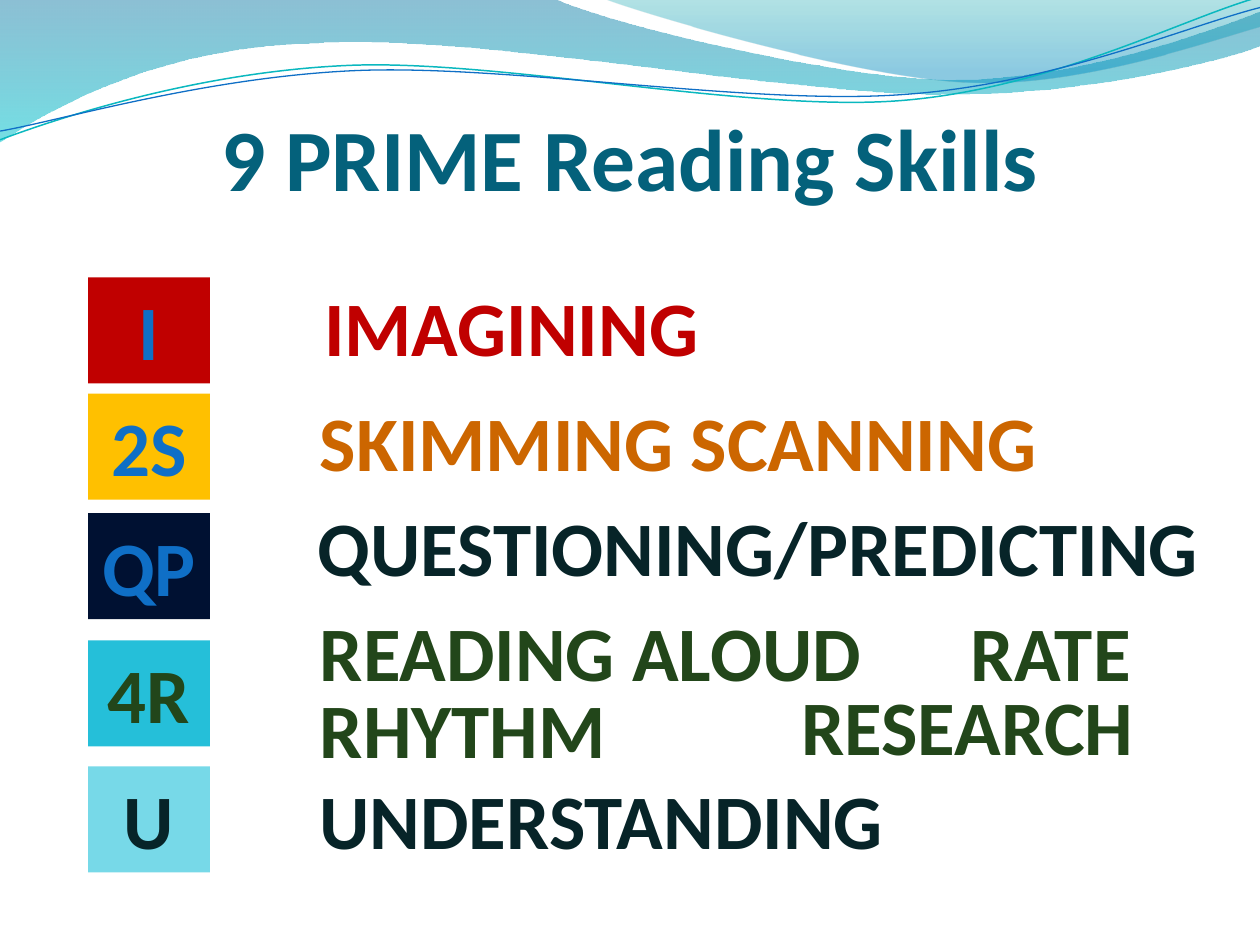
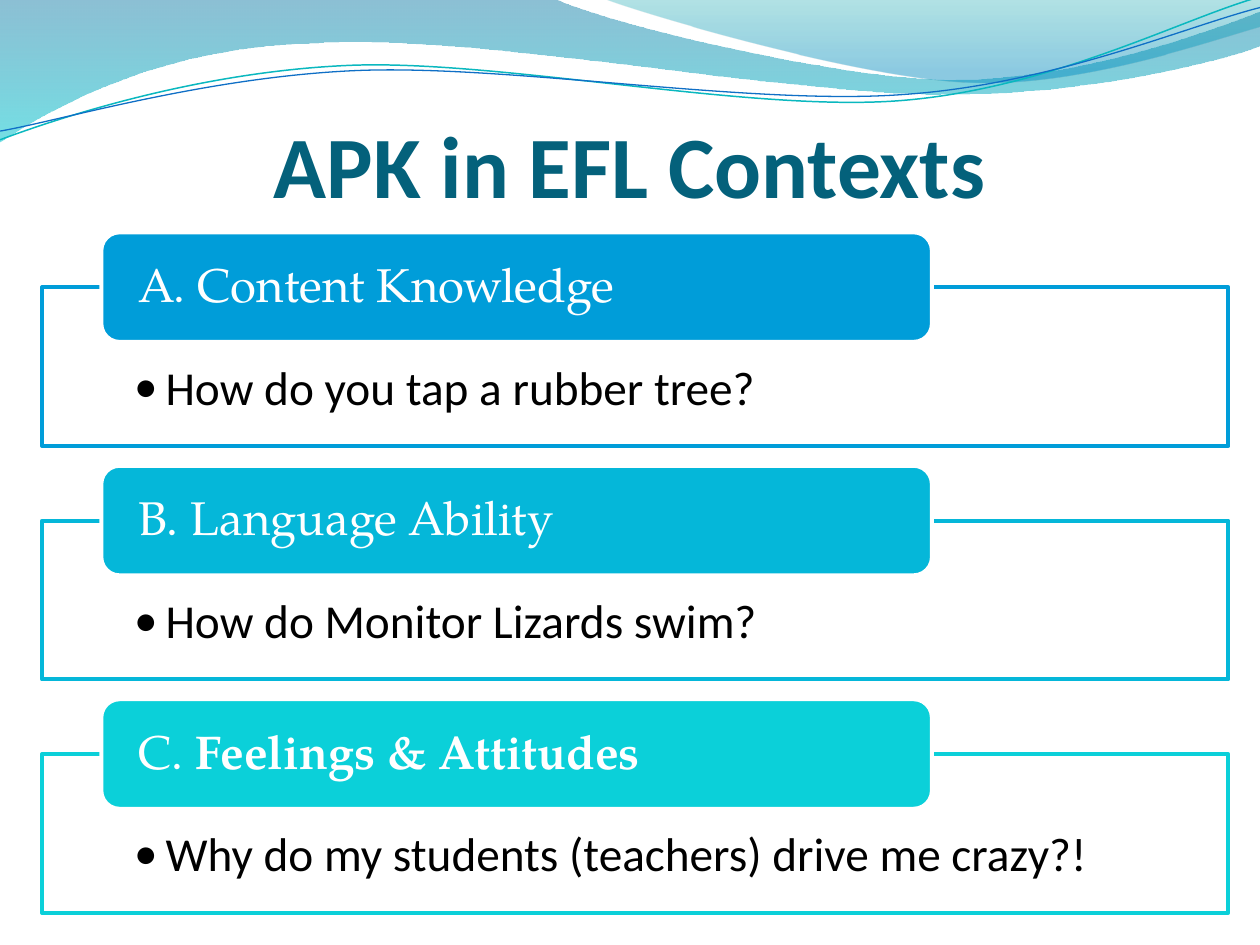
from lxml.etree import SubElement
from pptx import Presentation
from pptx.dml.color import RGBColor
from pptx.enum.shapes import MSO_SHAPE as Preset
from pptx.enum.text import MSO_ANCHOR as Anchor, PP_ALIGN as Align
from pptx.oxml.ns import qn
from pptx.util import Pt

# Colours
WHITE = RGBColor(0xFF, 0xFF, 0xFF)
BLACK = RGBColor(0x00, 0x00, 0x00)
TITLE_TEAL = RGBColor(0x04, 0x61, 0x7B)
BLUE = RGBColor(0x0F, 0x6F, 0xC6)
WAVE_BLUE = RGBColor(0x00, 0x74, 0xA1)
WAVE_AQUA = RGBColor(0x00, 0xC6, 0xCF)
CREST_TEAL = RGBColor(0x00, 0xA1, 0xA9)
CREST_BLUE = RGBColor(0x00, 0x8B, 0xBF)
LINE_TEAL = RGBColor(0x0A, 0xB8, 0xBF)
RED = RGBColor(0xC0, 0x00, 0x00)
YELLOW = RGBColor(0xFF, 0xC0, 0x00)
ORANGE = RGBColor(0xCC, 0x66, 0x00)
NAVY = RGBColor(0x00, 0x11, 0x32)
CYAN = RGBColor(0x25, 0xBF, 0xD9)
PALE_CYAN = RGBColor(0x77, 0xD9, 0xE8)
GREEN = RGBColor(0x22, 0x46, 0x1A)
INK = RGBColor(0x07, 0x24, 0x28)
PANEL_BLUE = RGBColor(0x00, 0x9D, 0xD9)
PANEL_SKY = RGBColor(0x05, 0xB7, 0xD9)
PANEL_AQUA = RGBColor(0x0B, 0xD0, 0xD9)

BODY_FONT = "Calibri"
TAB_FONT = "TeX Gyre Pagella"

# Header outlines in points: a start, then lines (1 point) or curves (3 points)
WAVE = [(0, 0), [(316.8, -0.7)],
        [(342.7, 12.2), (478.1, 45.4), (545.8, 45.4)],
        [(614.2, 45.4), (689.8, 18.7), (720, 6.5)], [(720.7, 25.9)],
        [(707.8, 31.7), (626.4, 54.7), (537.1, 54)],
        [(447.8, 54), (275, 20.2), (185, 24.5)],
        [(92.9, 25.9), (33.1, 59.8), (-0.7, 81.4)], [(0, 0)]]
CREST = [(344.9, -0.7),
         [(366.5, 7.9), (491, 44.6), (553.7, 46.8)],
         [(616.3, 49.7), (691.9, 23), (720, 15.1)], [(720, 0)], [(344.9, -0.7)]]
TEAL_CURVE = [(0, 79.9),
              [(34.6, 67), (113.8, 41), (199.4, 37.4)],
              [(284.4, 33.8), (427, 64.1), (513.4, 57.6)],
              [(599.8, 51.1), (675.4, 10.8), (718.6, -1.4)]]
BLUE_CURVE = [(0, 74.9),
              [(33.8, 69.1), (118.1, 43.9), (203.8, 40.3)],
              [(290.2, 36.7), (429.8, 60.5), (516.2, 54)],
              [(601.9, 48.2), (677.5, 15.1), (720, 4.3)]]

# Skills: badge text, fill, text colour, top
BADGES = [("I", RED, BLUE, 158.6), ("2S", YELLOW, BLUE, 225),
          ("QP", NAVY, BLUE, 293.3), ("4R", CYAN, GREEN, 366),
          ("U", PALE_CYAN, INK, 438)]
# Skill names: text, colour, left, top, width
SKILLS = [("IMAGINING", RED, 177.1, 156.2, 230.4),
          ("SKIMMING SCANNING", ORANGE, 173.5, 221.8, 428.4),
          ("QUESTIONING/PREDICTING", INK, 172.1, 282.2, 522.7),
          ("READING ALOUD", GREEN, 174.2, 342, 326.9),
          ("RATE", GREEN, 547.2, 342, 106.6),
          ("RHYTHM", GREEN, 165.6, 385.9, 198),
          ("RESEARCH", GREEN, 450, 384, 205.9),
          ("UNDERSTANDING", INK, 174.2, 438, 339.1)]
# Contexts: colour, heading spans (text, bold), question
CONTEXTS = [
    (PANEL_BLUE, [("A. Content Knowledge", False)], "How do you tap a rubber tree?"),
    (PANEL_SKY, [("B. Language Ability", False)], "How do Monitor Lizards swim?"),
    (PANEL_AQUA, [("C. ", False), ("Feelings & Attitudes", True)],
     "Why do my students (teachers) drive me crazy?!"),
]


def write_text(box, spans, size=44, color=BLACK, font=BODY_FONT, align=Align.LEFT,
               anchor=Anchor.TOP, insets=(7.2, 3.6, 7.2, 3.6), wrap=False,
               spacing=None, bullet=False):
    """Fill a shape with one paragraph of (text, bold) spans."""
    frame = box.text_frame
    frame.word_wrap = wrap
    frame.vertical_anchor = anchor
    (frame.margin_left, frame.margin_top,
     frame.margin_right, frame.margin_bottom) = map(Pt, insets)
    para = frame.paragraphs[0]
    para.alignment = align
    if spacing:
        para.line_spacing = spacing
    if bullet:
        para.level = 1
        properties = para._p.get_or_add_pPr()
        properties.set("marL", str(Pt(18)))
        properties.set("indent", str(Pt(-18)))
        SubElement(properties, qn("a:buFont"), typeface=font)
        SubElement(properties, qn("a:buChar"), char="•")
    for text, bold in spans:
        span = para.add_run()
        span.text = text
        span.font.size = Pt(size)
        span.font.bold = bold
        span.font.name = font
        span.font.color.rgb = color


def set_opacity(shape, *percents):
    """Give each fill colour of the shape its opacity, in order."""
    colors = shape._element.spPr.iter(qn("a:srgbClr"))
    for color, percent in zip(list(colors), percents):
        SubElement(color, qn("a:alpha"), val=str(percent * 1000))


def add_block(page, preset, area, fill, line=None, opacity=None):
    block = page.shapes.add_shape(preset, *map(Pt, area))
    block.shadow.inherit = False
    block.fill.solid()
    block.fill.fore_color.rgb = fill
    if opacity:
        set_opacity(block, opacity)
    if line is None:
        block.line.fill.background()
    else:
        block.line.color.rgb = line
        block.line.width = Pt(2.25)
    return block


def add_label(page, text, area, **style):
    box = page.shapes.add_textbox(*map(Pt, area))
    write_text(box, [(text, True)], align=Align.CENTER, **style)


def add_outline(page, outline, closed):
    """Freeform of lines and cubic curves."""
    start, *segments = outline
    builder = page.shapes.build_freeform(*map(Pt, start))
    builder.add_line_segments([(Pt(x), Pt(y)) for segment in segments for x, y in segment],
                              close=closed)
    shape = builder.convert_to_shape()
    shape.shadow.inherit = False
    # Join each three line ends of a curve into one cubic segment
    lines = iter(list(shape._element.spPr.iter(qn("a:lnTo"))))
    for segment in segments:
        first, *others = [next(lines) for _ in segment]
        if others:
            first.tag = qn("a:cubicBezTo")
            for other in others:
                first.append(other[0])
                other.getparent().remove(other)
    return shape


def add_wave(page, outline, stops):
    """Closed band; each stop is position, colour, opacity."""
    wave = add_outline(page, outline, True)
    wave.fill.gradient()
    wave.fill.gradient_angle = 270
    for stop, (position, color, _) in zip(wave.fill.gradient_stops, stops):
        stop.position = position
        stop.color.rgb = color
    set_opacity(wave, *[opacity for _, _, opacity in stops])
    wave.line.fill.background()


def add_curve(page, outline, color, width):
    curve = add_outline(page, outline, False)
    curve.fill.background()
    curve.line.color.rgb = color
    curve.line.width = Pt(width)


def add_page(deck, title, top, height):
    """Blank slide with the shared wave header and a title."""
    page = deck.slides.add_slide(deck.slide_layouts[6])
    add_wave(page, WAVE, [(0, WAVE_BLUE, 45), (1, WAVE_AQUA, 55)])
    add_wave(page, CREST, [(0, CREST_TEAL, 30), (0.8, CREST_BLUE, 45)])
    add_curve(page, TEAL_CURVE, LINE_TEAL, 0.85)
    add_curve(page, BLUE_CURVE, BLUE, 0.75)
    add_label(page, title, (36, top, 648, height), size=50, color=TITLE_TEAL,
              anchor=Anchor.BOTTOM, insets=(0, 3.6, 0, 0), wrap=True)
    return page


def add_badge(page, text, fill, color, top):
    badge = add_block(page, Preset.RECTANGLE, (50.4, top, 69.6, 60.5), fill)
    write_text(badge, [(text, True)], color=color, align=Align.CENTER)


def add_context(page, top, color, heading, question):
    """Framed question with a heading tab over its top edge."""
    panel = add_block(page, Preset.RECTANGLE, (24, top, 678, 90.7), WHITE,
                      line=color, opacity=90)
    write_text(panel, [(question, False)], size=27, insets=(52.6, 43.9, 52.6, 15.1),
               wrap=True, spacing=0.9, bullet=True)
    tab = add_block(page, Preset.ROUNDED_RECTANGLE, (57.9, top - 31.4, 474.6, 62.6),
                    color, line=WHITE)
    write_text(tab, heading, size=27, color=WHITE, font=TAB_FONT, anchor=Anchor.MIDDLE,
               insets=(18, 0, 18, 0), wrap=True, spacing=0.9)


def main():
    deck = Presentation()
    deck.slide_width, deck.slide_height = Pt(720), Pt(540)

    # Reading skills
    page = add_page(deck, "9 PRIME Reading Skills", 33.8, 85.7)
    for badge in BADGES:
        add_badge(page, *badge)
    for text, color, left, top, width in SKILLS:
        add_label(page, text, (left, top, width, 60.5), color=color)

    # Contexts
    page = add_page(deck, "APK in EFL Contexts", 47.2, 76.3)
    for row, context in enumerate(CONTEXTS):
        add_context(page, 164.2 + row * 133.4, *context)

    deck.save("out.pptx")


if __name__ == "__main__":
    main()
